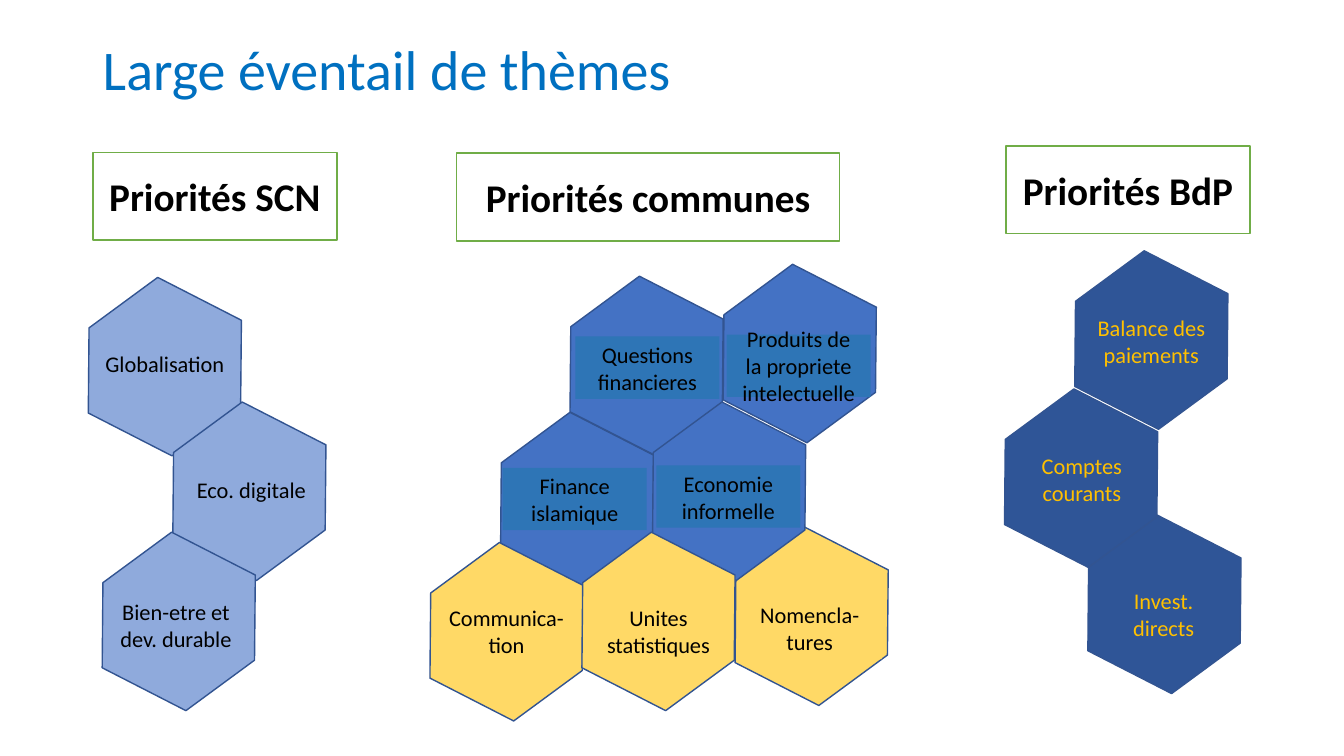
from collections import namedtuple

from pptx import Presentation
from pptx.dml.color import RGBColor
from pptx.enum.shapes import MSO_SHAPE as Preset
from pptx.enum.text import MSO_ANCHOR as Anchor, PP_ALIGN as Align
from pptx.util import Cm, Pt

FONT = "Calibri"
COLOURS = {
    "title": "0070C0",
    "black": "000000",
    "white": "FFFFFF",
    "gold": "FFC000",
    "green": "70AD47",
    "outline": "325491",
    "light blue": "8FAADC",
    "blue": "4472C4",
    "label blue": "2E75B6",
    "dark blue": "2F5597",
    "yellow": "FFD966",
}

HEXAGON_SIZE = (4.29, 3.84)
HEXAGON_TURN = 27.1
LABEL_SIZE = (3.63, 1.57)

# Each style gives the hexagon fill, label fill and text colour
Style = namedtuple("Style", "hexagon label text")
SCN = Style("light blue", "light blue", "black")
COMMON = Style("blue", "label blue", "black")
SUPPORT = Style("yellow", "yellow", "black")
BDP = Style("dark blue", "dark blue", "gold")

# Text, style, hexagon corner and label corner, from back to front
THEMES = [
    ("Globalisation", SCN, (2.01, 7.32), (2.34, 8.38)),
    ("Eco. digitale", SCN, (4.14, 10.46), (4.52, 11.56)),
    ("Bien-etre et dev. durable", SCN, (2.36, 13.74), (2.62, 14.96)),
    ("Nomencla-tures", SUPPORT, (18.31, 13.61), (18.59, 15.04)),
    ("Finance islamique", COMMON, (12.4, 10.72), (12.67, 11.79)),
    ("Communica-tion", SUPPORT, (10.62, 14), (10.95, 15.11)),
    ("Questions financieres", COMMON, (14.15, 7.29), (14.5, 8.48)),
    ("Economie informelle", COMMON, (16.23, 10.46), (16.54, 11.73)),
    ("Unites statistiques", SUPPORT, (14.45, 13.74), (14.78, 15.11)),
    ("Produits de la propriete intelectuelle", COMMON, (18.01, 6.99), (18.31, 8.43)),
    ("Invest. directs", BDP, (27.2, 13.31), (27.51, 14.68)),
    ("Comptes courants", BDP, (25.1, 10.13), (25.45, 11.28)),
    ("Balance des paiements", BDP, (26.87, 6.65), (27.2, 7.8)),
]

# Text, corner and width
HEADINGS = [
    ("Priorités SCN", (2.34, 3.84), 6.15),
    ("Priorités BdP", (25.35, 3.68), 6.15),
    ("Priorités communes", (11.51, 3.86), 9.65),
]
HEADING_HEIGHT = 2.21


def colour(name):
    return RGBColor.from_string(COLOURS[name])


def add_preset(page, preset, corner, size, fill, line=None):
    lengths = [Cm(value) for value in (*corner, *size)]
    shape = page.shapes.add_shape(preset, *lengths)
    shape.shadow.inherit = False
    shape.fill.solid()
    shape.fill.fore_color.rgb = colour(fill)
    if line:
        shape.line.color.rgb = colour(line)
        shape.line.width = Pt(1)
    else:
        shape.line.fill.background()
    return shape


def write(box, text, size, ink, align=Align.CENTER, bold=False):
    frame = box.text_frame
    frame.text = text
    frame.word_wrap = True
    frame.vertical_anchor = Anchor.MIDDLE
    para = frame.paragraphs[0]
    para.alignment = align
    font = para.runs[0].font
    font.name = FONT
    font.size = Pt(size)
    font.bold = bold
    font.color.rgb = colour(ink)
    return para


def add_title(page, text):
    box = page.shapes.add_textbox(Cm(2.34), Cm(0.05), Cm(29.21), Cm(3.66))
    para = write(box, text, 40, "title", Align.LEFT)
    para.line_spacing = 0.8
    para.space_before = Pt(10)


def add_hexagon(page, corner, fill):
    hexagon = add_preset(page, Preset.HEXAGON, corner, HEXAGON_SIZE, fill, "outline")
    hexagon.rotation = HEXAGON_TURN


def add_label(page, text, corner, style):
    label = add_preset(page, Preset.RECTANGLE, corner, LABEL_SIZE, style.label)
    write(label, text, 16, style.text)


def add_heading(page, text, corner, width):
    size = (width, HEADING_HEIGHT)
    heading = add_preset(page, Preset.RECTANGLE, corner, size, "white", "green")
    write(heading, text, 28, "black", bold=True)


def main():
    deck = Presentation()
    deck.slide_width, deck.slide_height = Cm(33.87), Cm(19.05)
    page = deck.slides.add_slide(deck.slide_layouts[6])

    add_title(page, "Large éventail de thèmes")

    # All hexagons lie behind all labels
    for _, style, corner, _ in THEMES:
        add_hexagon(page, corner, style.hexagon)
    for text, style, _, corner in THEMES:
        add_label(page, text, corner, style)

    # Column headings
    for text, corner, width in HEADINGS:
        add_heading(page, text, corner, width)

    deck.save("out.pptx")


if __name__ == "__main__":
    main()
